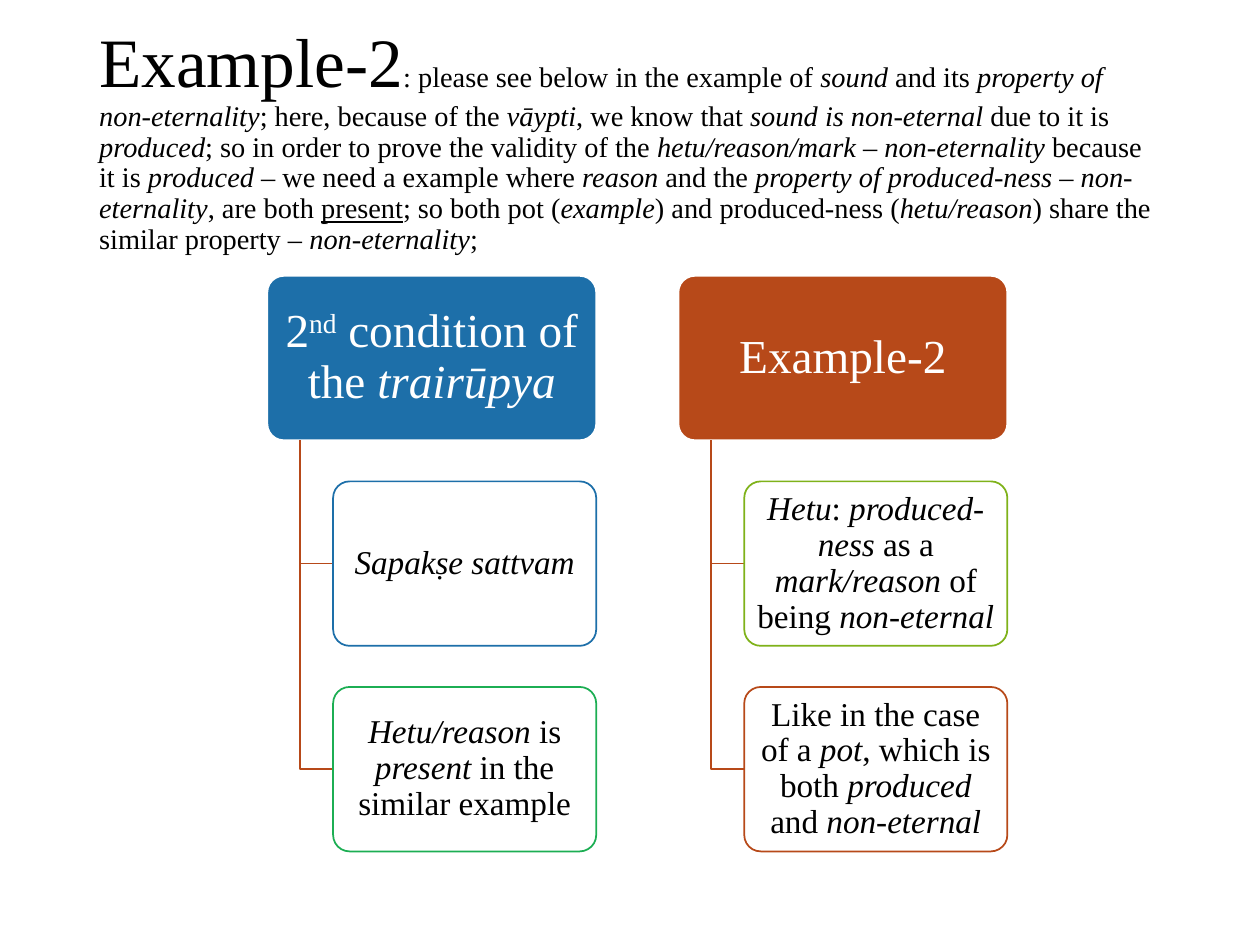
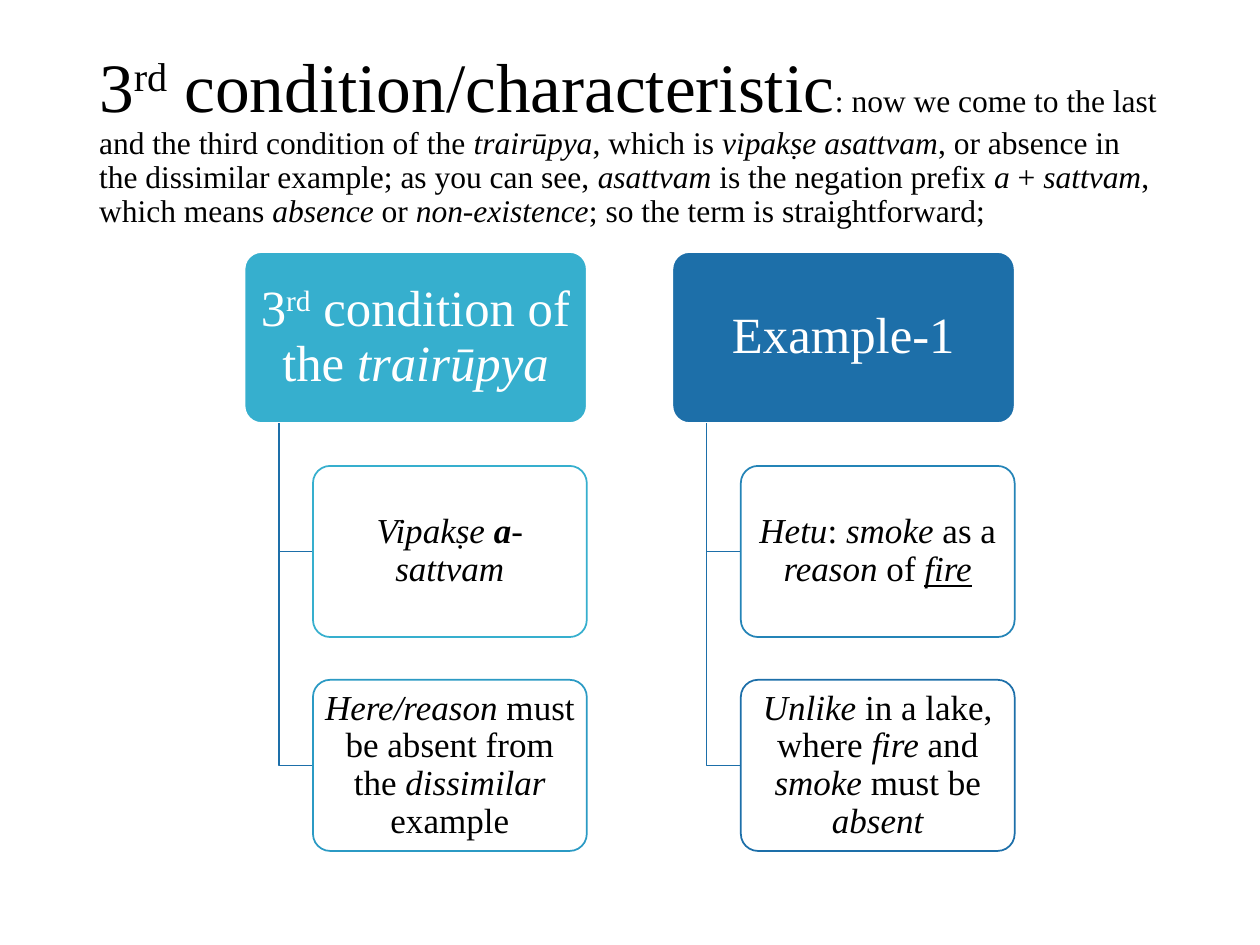
from lxml.etree import SubElement
from pptx import Presentation
from pptx.dml.color import RGBColor
from pptx.enum.shapes import MSO_SHAPE
from pptx.enum.text import MSO_ANCHOR, PP_ALIGN
from pptx.oxml.ns import qn
from pptx.util import Cm, Pt

FONT = "Times New Roman"
BLACK = RGBColor(0x00, 0x00, 0x00)
WHITE = RGBColor(0xFF, 0xFF, 0xFF)
BLUE = RGBColor(0x1D, 0x6F, 0xA9)
MID_BLUE = RGBColor(0x24, 0x84, 0xB7)
SKY = RGBColor(0x2B, 0x9A, 0xC4)
CYAN = RGBColor(0x36, 0xAF, 0xCE)
RUST = RGBColor(0xB7, 0x49, 0x19)
GREEN = RGBColor(0x1C, 0xAE, 0x53)
LIME = RGBColor(0x7F, 0xB2, 0x1A)

# Text marks: *italic*, _underline_, ~bold~, ^superscript^
# Each column: head text, head colour, then (text, outline) for its two boxes
SLIDES = [
    dict(
        title="Example-2", body_size=16.2,
        body=": please see below in the example of *sound* and its *property of "
             "non-eternality*; here, because of the *vāypti*, we know that *sound is "
             "non-eternal* due to it is *produced*; so in order to prove the validity of "
             "the *hetu/reason/mark *– *non-eternality* because it is *produced* – we need "
             "a example where *reason* and the *property of produced-ness* – "
             "*non-eternality*, are both _present_; so both pot (*example*) and "
             "produced-ness (*hetu/reason*) share the similar property – *non-eternality*;",
        left=5.39, top=5.56, width=6.63, head_size=27, box_size=19, link=RUST,
        columns=[
            ("2^nd^ condition of the *trairūpya*", BLUE,
             [("*Sapakṣe sattvam*", BLUE),
              ("*Hetu/reason *is *present* in the similar example", GREEN)]),
            ("Example-2", RUST,
             [("*Hetu*: *produced-ness* as a *mark/reason* of being *non-eternal*", LIME),
              ("Like in the case of a *pot*, which is both *produced* and *non-eternal*",
               RUST)]),
        ],
    ),
    dict(
        title="3^rd^ condition/characteristic", body_size=18,
        body=": now we come to the last and the third condition of the *trairūpya*, which "
             "is *vipakṣe asattvam*, or absence in the dissimilar example; as you can see, "
             "*asattvam* is the negation prefix *a* + *sattvam*, which means *absence* or "
             "*non-existence*; so the term is straightforward;",
        left=4.93, top=5.08, width=6.9, head_size=29, box_size=20, link=BLUE,
        columns=[
            ("3^rd^ condition of the *trairūpya*", CYAN,
             [("*Vipakṣe ~a~-sattvam*", CYAN),
              ("*Here/reason* must be absent from the *dissimilar* example", SKY)]),
            ("Example-1", BLUE,
             [("*Hetu*: *smoke* as a *reason* of *_fire_*", MID_BLUE),
              ("*Unlike* in a lake, where *fire* and *smoke* must be *absent*", BLUE)]),
        ],
    ),
]


def add_runs(p, text, size=None):
    """Add marked text to a paragraph, one run per change of style."""
    on = {mark: False for mark in "*_~^"}
    piece = ""
    for ch in text + "\0":
        if ch not in on and ch != "\0":
            piece += ch
            continue
        if piece:
            r = p.add_run()
            r.text = piece
            r.font.size = Pt(size) if size else None
            r.font.italic = on["*"] or None
            r.font.underline = on["_"] or None
            r.font.bold = on["~"] or None
            if on["^"]:
                r.font._element.set("baseline", "30000")
            piece = ""
        if ch in on:
            on[ch] = not on[ch]


def add_box(s, x, y, w, h, fill, line, text, size, color, inset):
    """Add a rounded box with centred text."""
    sp = s.shapes.add_shape(MSO_SHAPE.ROUNDED_RECTANGLE, Cm(x), Cm(y), Cm(w), Cm(h))
    sp.adjustments[0] = 0.1
    sp.shadow.inherit = False
    sp.fill.solid()
    sp.fill.fore_color.rgb = fill
    sp.line.color.rgb = line
    sp.line.width = Pt(1)
    tf = sp.text_frame
    tf.word_wrap = True
    tf.vertical_anchor = MSO_ANCHOR.MIDDLE
    tf.margin_left = tf.margin_right = Cm(inset)
    tf.margin_top = tf.margin_bottom = Cm(inset * 2 / 3)
    p = tf.paragraphs[0]
    p.alignment = PP_ALIGN.CENTER
    p.line_spacing = 0.9
    p.font.name, p.font.size, p.font.color.rgb = FONT, Pt(size), color
    add_runs(p, text)
    return sp


prs = Presentation()
prs.slide_width, prs.slide_height = Cm(25.4), Cm(19.05)

for data in SLIDES:
    s = prs.slides.add_slide(prs.slide_layouts[6])

    # Title running on into the explanation
    tf = s.shapes.add_textbox(Cm(1.75), Cm(1.01), Cm(21.9), Cm(3.68)).text_frame
    tf.word_wrap = True
    tf.vertical_anchor = MSO_ANCHOR.MIDDLE
    p = tf.paragraphs[0]
    p.line_spacing = 0.9
    p.font.name, p.font.color.rgb = FONT, BLACK
    add_runs(p, data["title"], 39.6)
    add_runs(p, data["body"], data["body_size"])

    # Two columns: a head with two boxes hanging from it
    w = data["width"]
    h = w / 2
    for col, (head, head_color, boxes) in enumerate(data["columns"]):
        x, y = data["left"] + col * 1.25 * w, data["top"]
        add_box(s, x, y, w, h, head_color, WHITE, head, data["head_size"], WHITE, 0.15)

        for row, (text, outline) in enumerate(boxes, 1):
            box_x, box_y = x + 0.2 * w, y + row * 1.25 * h

            # Bent link from the head to the middle of the box's left side
            stem_x, mid_y = Cm(x + 0.1 * w), Cm(box_y + h / 2)
            fb = s.shapes.build_freeform(stem_x, Cm(y + h))
            fb.add_line_segments([(stem_x, mid_y), (Cm(box_x), mid_y)], close=False)
            link = fb.convert_to_shape()
            link.shadow.inherit = False
            link.fill.background()
            link.line.color.rgb = data["link"]
            link.line.width = Pt(1)

            sp = add_box(s, box_x, box_y, 0.8 * w, h, WHITE, outline,
                         text, data["box_size"], BLACK, 0.1)
            clr = sp._element.spPr.find(qn("a:solidFill"))[0]
            SubElement(clr, qn("a:alpha")).set("val", "90000")

prs.save("out.pptx")
